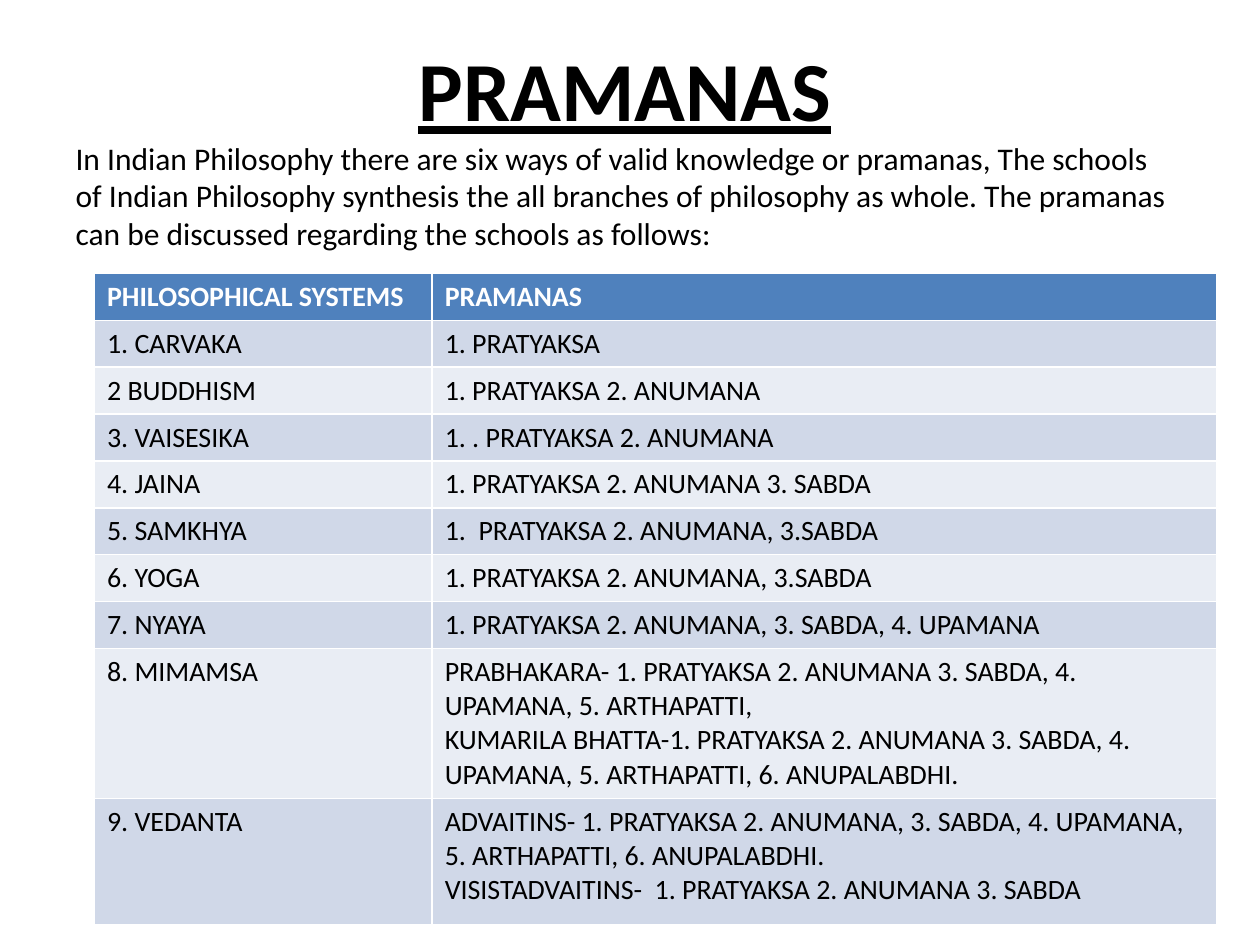
from pptx import Presentation
from pptx.dml.color import RGBColor
from pptx.enum import text
from pptx.util import Inches, Pt


def paint(color, value):
    color.rgb = RGBColor.from_string(value)


def write(frame, lines, **form):
    """Put each line in its own paragraph and set its font."""
    frame.text = "\n".join(lines)
    for para in frame.paragraphs:
        font = para.runs[0].font
        font.name = "Calibri"
        paint(font.color, form["color"])
        font.size = Pt(form["size"])
        font.bold = form["bold"]


INTRO = (
    "In Indian Philosophy there are six ways of valid knowledge or pramanas, "
    "The schools of Indian Philosophy synthesis the all branches of philosophy "
    "as whole. The pramanas can be discussed regarding the schools as follows:"
)
ROWS = [
    ("PHILOSOPHICAL SYSTEMS", ["PRAMANAS"]),
    ("1. CARVAKA", ["1. PRATYAKSA"]),
    ("2 BUDDHISM", ["1. PRATYAKSA 2. ANUMANA"]),
    ("3. VAISESIKA", ["1. . PRATYAKSA 2. ANUMANA"]),
    ("4. JAINA", ["1. PRATYAKSA 2. ANUMANA 3. SABDA"]),
    ("5. SAMKHYA", ["1.  PRATYAKSA 2. ANUMANA, 3.SABDA"]),
    ("6. YOGA", ["1. PRATYAKSA 2. ANUMANA, 3.SABDA"]),
    ("7. NYAYA", ["1. PRATYAKSA 2. ANUMANA, 3. SABDA, 4. UPAMANA"]),
    ("8. MIMAMSA", [
        "PRABHAKARA- 1. PRATYAKSA 2. ANUMANA 3. SABDA, 4. UPAMANA, 5. ARTHAPATTI,",
        "KUMARILA BHATTA-1. PRATYAKSA 2. ANUMANA 3. SABDA, 4. UPAMANA, "
        "5. ARTHAPATTI, 6. ANUPALABDHI.",
    ]),
    ("9. VEDANTA", [
        "ADVAITINS- 1. PRATYAKSA 2. ANUMANA, 3. SABDA, 4. UPAMANA, "
        "5. ARTHAPATTI, 6. ANUPALABDHI.",
        "VISISTADVAITINS-  1. PRATYAKSA 2. ANUMANA 3. SABDA",
    ]),
]
HEIGHTS = [0.37] * 8 + [1.19, 1]
WIDTHS = [2.68, 6.23]

deck = Presentation()
deck.slide_width, deck.slide_height = Inches(10), Inches(7.5)
slide = deck.slides.add_slide(deck.slide_layouts[5])

# Heading and introduction
title = slide.shapes.title
title.left, title.top = Inches(0.5), Inches(0.25)
title.width, title.height = Inches(8.92), Inches(1.82)
frame = title.text_frame
write(frame, ["PRAMANAS", INTRO], color="000000", size=18, bold=False)
frame.auto_size = text.MSO_AUTO_SIZE.NONE
frame.vertical_anchor = text.MSO_ANCHOR.TOP
head, intro = frame.paragraphs
head.alignment = text.PP_ALIGN.CENTER
intro.alignment = text.PP_ALIGN.LEFT
for name, value in {"size": Pt(48), "bold": True, "underline": True}.items():
    setattr(head.runs[0].font, name, value)

# Schools and their pramanas; the default table style gives the white rules
table = slide.shapes.add_table(
    len(ROWS), len(WIDTHS), Inches(0.75), Inches(2.17),
    Inches(sum(WIDTHS)), Inches(sum(HEIGHTS))).table
for column, width in zip(table.columns, WIDTHS):
    column.width = Inches(width)
for i, (school, means) in enumerate(ROWS):
    table.rows[i].height = Inches(HEIGHTS[i])
    top = i == 0
    fill = "4F81BD" if top else ("E9EDF4", "D0D8E8")[i % 2]
    for cell, lines in zip(table.rows[i].cells, ([school], means)):
        cell.fill.solid()
        paint(cell.fill.fore_color, fill)
        write(cell.text_frame, lines, size=16, bold=top,
              color="FFFFFF" if top else "000000")

deck.save("out.pptx")
